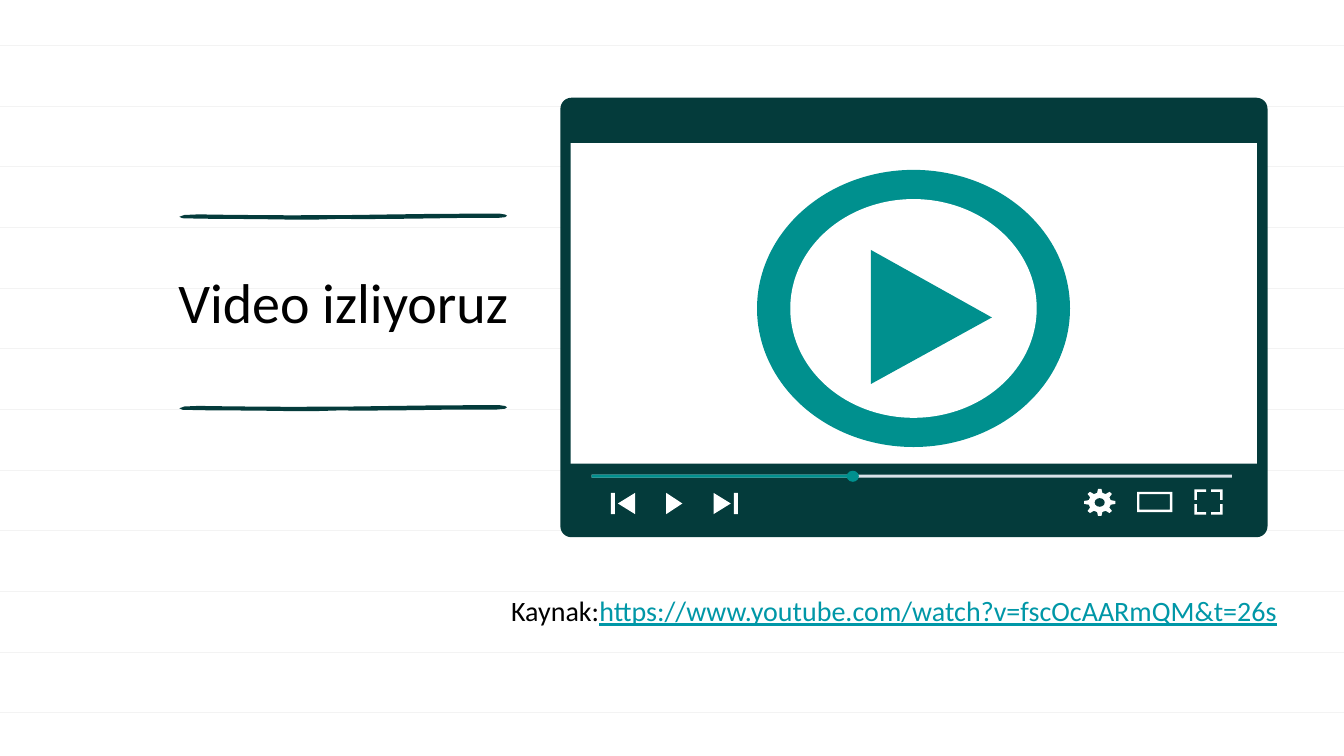
import math

import pptx
import pptx.dml.color
import pptx.enum.shapes
import pptx.enum.text
import pptx.oxml
import pptx.oxml.ns
import pptx.util

SHAPE = pptx.enum.shapes.MSO_SHAPE
DARK, TEAL, WHITE = "043B3B", "00908E", "FFFFFF"
TRACK, RULE, BLACK, LINK = "D9E2E9", "F3F3F3", "000000", "0097A7"
COLUMNS, ROWS = 133.33, 75


def rgb(hex_code):
    return pptx.dml.color.RGBColor.from_string(hex_code)


def cells(count):
    """Length of a number of grid cells, each a tenth of an inch square."""
    return pptx.util.Inches(count / 10)


class Board:
    """Draws on one slide; all lengths are grid columns and rows."""

    font = "Calibri"
    inset = 1.3

    def __init__(self, slide):
        self.shapes = slide.shapes

    def paint(self, shape, color):
        shape.shadow.inherit = False
        shape.fill.solid()
        shape.fill.fore_color.rgb = rgb(color)
        shape.line.fill.background()

    def shape(self, kind, left, top, width, height, color, adjust=None):
        item = self.shapes.add_shape(kind, *map(cells, (left, top, width, height)))
        if adjust is not None:
            item.adjustments[0] = adjust
        self.paint(item, color)

    def outline(self, points, color):
        start, *rest = [(cells(x), cells(y)) for x, y in points]
        builder = self.shapes.build_freeform(*start, scale=1.0)
        builder.add_line_segments(rest, close=True)
        self.paint(builder.convert_to_shape(), color)

    def triangle(self, base, tip, top, bottom, tip_row, color):
        self.outline([(base, top), (base, bottom), (tip, tip_row)], color)

    def rule(self, row):
        line = self.shapes.add_connector(
            pptx.enum.shapes.MSO_CONNECTOR.STRAIGHT,
            0, cells(row), cells(COLUMNS), cells(row))
        line.line.color.rgb = rgb(RULE)
        line.line.width = pptx.util.Pt(0.75)
        effects = pptx.oxml.parse_xml(
            f'<a:effectLst {pptx.oxml.ns.nsdecls("a")}/>')
        line._element.spPr.append(effects)

    def text(self, left, top, width, height, size, runs, align, spacing=1.0):
        """Add one paragraph of (text, colour, underline) runs."""
        box = self.shapes.add_textbox(*map(cells, (left, top, width, height)))
        frame = box.text_frame
        frame.word_wrap = True
        frame.margin_left = frame.margin_right = cells(self.inset)
        frame.margin_top = frame.margin_bottom = cells(self.inset)
        paragraph = frame.paragraphs[0]
        paragraph.alignment = align
        paragraph.line_spacing = spacing
        for words, color, underline in runs:
            run = paragraph.add_run()
            run.text = words
            run.font.name = self.font
            run.font.size = pptx.util.Pt(size)
            run.font.color.rgb = rgb(color)
            run.font.underline = underline


def brush_stroke(board, top):
    upper = [(17.8, 0.3), (18.3, 0.13), (19.7, 0.07), (23.1, 0.12), (28.7, 0.16),
             (34.3, 0.14), (38.4, 0.08), (42.8, 0.02), (46.4, 0),
             (49.6, 0), (50.1, 0.08), (50.3, 0.2)]
    lower = [(50.1, 0.35), (49.3, 0.43), (45.4, 0.43), (40.6, 0.5), (36.1, 0.54),
             (33.6, 0.52), (31.5, 0.58), (28.5, 0.58), (25.6, 0.54),
             (20, 0.5), (18.1, 0.45)]
    board.outline([(x, top + y) for x, y in upper + lower], DARK)


def player_window(board):
    board.shape(SHAPE.ROUNDED_RECTANGLE, 55.6, 9.7, 70.15, 43.6, DARK, 0.025)
    board.shape(SHAPE.RECTANGLE, 56.6, 14.2, 68.1, 31.8, WHITE)
    board.shape(SHAPE.OVAL, 75.1, 16.85, 31.05, 27.5, TEAL)
    board.shape(SHAPE.OVAL, 78.4, 19.75, 24.45, 21.7, WHITE)
    board.triangle(86.4, 98.4, 24.8, 38.1, 31.5, TEAL)


def progress_bar(board):
    for length, color in ((63.5, TRACK), (25.9, TEAL)):
        board.shape(SHAPE.RECTANGLE, 58.7, 47.1, length, 0.3, color)
    board.shape(SHAPE.OVAL, 84, 46.7, 1.2, 1.1, TEAL)


def playback_buttons(board):
    top, bottom, middle = 48.9, 51, 49.95
    for base, tip in ((63, 61.3), (66.1, 67.7), (70.8, 72.5)):
        board.triangle(base, tip, top, bottom, middle, WHITE)
    for left in (60.6, 72.8):
        board.shape(SHAPE.RECTANGLE, left, top, 0.4, bottom - top, WHITE)


def settings_gear(board, x, y, teeth=8):
    pitch = math.tau / teeth
    profile = ((-0.3, 0.72), (-0.14, 1), (0.14, 1), (0.3, 0.72))
    rim = []
    for tooth in range(teeth):
        for offset, reach in profile:
            angle = (tooth + offset) * pitch
            rim.append((x + 1.55 * reach * math.sin(angle),
                        y - 1.35 * reach * math.cos(angle)))
    board.outline(rim, WHITE)
    board.shape(SHAPE.OVAL, x - 0.5, y - 0.43, 1, 0.86, DARK)


def full_screen_corners(board, x, y):
    corner = ((1.4, 0.2), (1.4, 1.25), (0.25, 1.25),
              (0.25, 1), (1.15, 1), (1.15, 0.2))
    for side in (-1, 1):
        for end in (-1, 1):
            board.outline([(x + side * dx, y + end * dy) for dx, dy in corner], WHITE)


def main():
    deck = pptx.Presentation()
    deck.slide_width, deck.slide_height = cells(COLUMNS), cells(ROWS)
    board = Board(deck.slides.add_slide(deck.slide_layouts[6]))

    for index in range(12):
        board.rule(4.5 + 6.02 * index)

    align = pptx.enum.text.PP_ALIGN
    board.text(16.4, 25.2, 35.7, 11.6, 40,
               [("Video izliyoruz", BLACK, False)], align.LEFT)
    for top in (21.2, 40.2):
        brush_stroke(board, top)
    board.text(48.0, 57.1, 81.4, 4.6, 20,
               [("Kaynak:", BLACK, False),
                ("https://www.youtube.com/watch?v=fscOcAARmQM&t=26s", LINK, True)],
               align.CENTER, 1.15)

    player_window(board)
    progress_bar(board)
    playback_buttons(board)
    settings_gear(board, 109.1, 49.85)
    board.shape(SHAPE.FRAME, 112.8, 48.8, 3.5, 2, WHITE, 0.12)
    full_screen_corners(board, 119.9, 49.8)
    deck.save("out.pptx")


if __name__ == "__main__":
    main()
